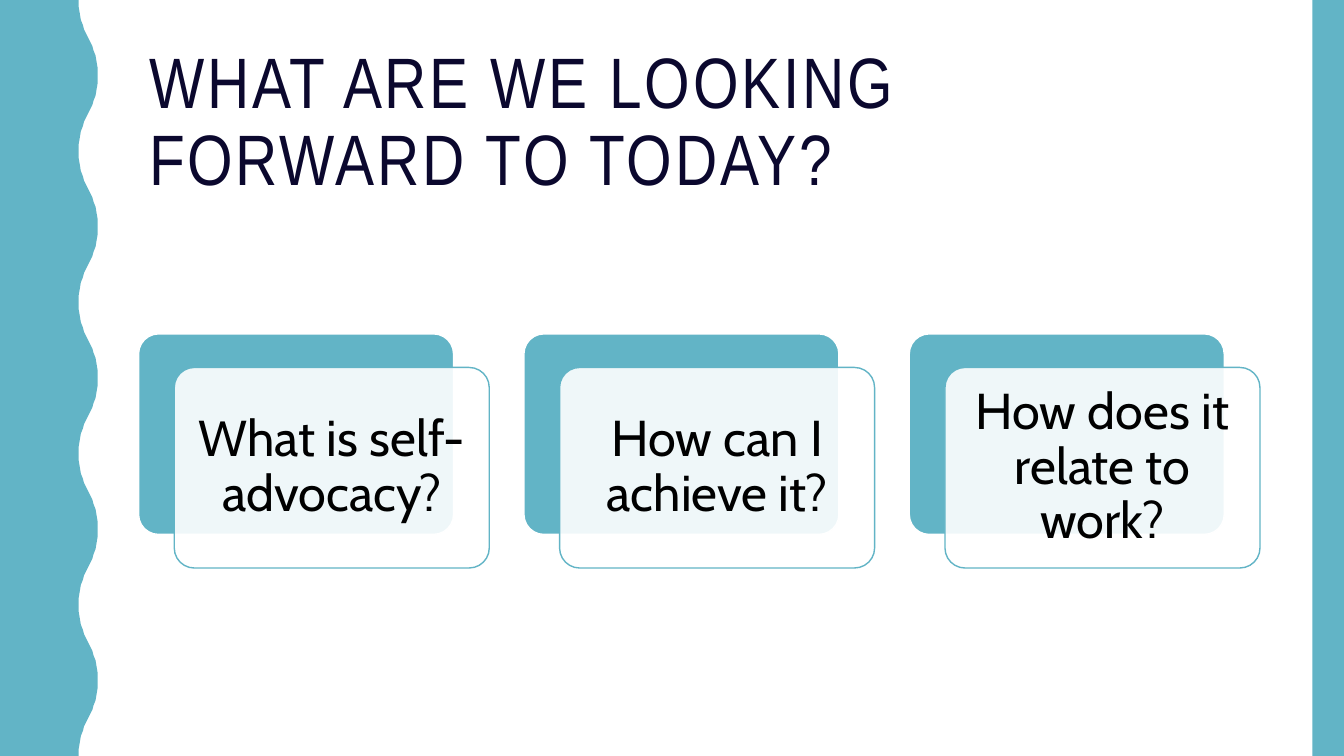
from typing import Any, NamedTuple

from lxml.etree import SubElement
from pptx import Presentation
from pptx.dml.color import RGBColor
from pptx.enum.shapes import MSO_SHAPE as Shape
from pptx.enum.text import MSO_ANCHOR as Anchor, MSO_AUTO_SIZE as AutoSize, PP_ALIGN as Align
from pptx.oxml.ns import qn
from pptx.util import Pt

PX = 9525
WIDTH, HEIGHT = 1280, 720
COLORS = {"teal": "62B4C6", "white": "FFFFFF", "navy": "0B082E", "black": "000000"}

# (x, y) along one outward half wave; the inward half mirrors it
HALF_WAVE = [(75, 0), (75, 7), (76, 13), (77, 19), (79, 24), (80, 28), (82, 32), (84, 36),
             (86, 40), (88, 44), (89, 48), (91, 53), (92, 59), (93, 65)]
HALF_HEIGHT, HALF_COUNT = 72, 10
WAVE_X_SUM = 75 + 93

CARD_PITCH = 367
BACK_TO_FRONT = (34, 32)
QUESTIONS = ["What is self-advocacy?", "How can I achieve it?", "How does it relate to work?"]


class Box(NamedTuple):
    left: int
    top: int
    width: int
    height: int

    def moved(self, dx: int, dy: int = 0) -> "Box":
        return self._replace(left=self.left + dx, top=self.top + dy)

    def emu(self) -> list[int]:
        return [n * PX for n in self]


class TextStyle(NamedTuple):
    font: str
    size: int
    color: str
    align: Align
    inset: tuple[int, int]


TITLE = TextStyle("Arial Narrow", 51, "navy", Align.LEFT, (10, 5))
QUESTION = TextStyle("Cabin", 36, "black", Align.CENTER, (14, 14))
TITLE_BOX = Box(132, 40, 1068, 156)
FIRST_CARD = Box(132, 318, 300, 191)
RIGHT_BAR = Box(1250, 0, 30, HEIGHT)


def rgb(name: str) -> RGBColor:
    return RGBColor.from_string(COLORS[name])


def set_all(target: Any, values: dict[str, Any]) -> None:
    for name, value in values.items():
        setattr(target, name, value)


def paint(sp: Any, fill: str, line: str | None = None) -> None:
    sp.shadow.inherit = False
    sp.fill.solid()
    sp.fill.fore_color.rgb = rgb(fill)
    if line:
        sp.line.color.rgb = rgb(line)
        sp.line.width = Pt(1)
    else:
        sp.line.fill.background()


def write(sp: Any, text: str, style: TextStyle) -> None:
    tf = sp.text_frame
    tf.text = text
    dx, dy = (n * PX for n in style.inset)
    set_all(tf, {"word_wrap": True, "auto_size": AutoSize.NONE, "vertical_anchor": Anchor.MIDDLE,
                 "margin_left": dx, "margin_right": dx, "margin_top": dy, "margin_bottom": dy})
    p = tf.paragraphs[0]
    set_all(p, {"alignment": style.align, "line_spacing": 0.9})
    for r in p.runs:
        set_all(r.font, {"name": style.font, "size": Pt(style.size)})
        r.font.color.rgb = rgb(style.color)


def add_title(s: Any, text: str) -> None:
    sp = s.shapes.title
    set_all(sp, dict(zip(("left", "top", "width", "height"), TITLE_BOX.emu())))
    write(sp, text, TITLE)
    for r in sp.text_frame.paragraphs[0].runs:
        r.font._element.set("spc", "200")


def add_wave(s: Any) -> None:
    edge = [(WAVE_X_SUM - x if half % 2 else x, y + half * HALF_HEIGHT)
            for half in range(HALF_COUNT) for x, y in HALF_WAVE]
    builder = s.shapes.build_freeform(0, 0, scale=PX)
    builder.add_line_segments([*edge, (HALF_WAVE[0][0], HEIGHT), (0, HEIGHT)], close=True)
    paint(builder.convert_to_shape(), "teal")


def add_round(s: Any, box: Box, fill: str, line: str) -> Any:
    sp = s.shapes.add_shape(Shape.ROUNDED_RECTANGLE, *box.emu())
    sp.adjustments[0] = 0.1
    paint(sp, fill, line)
    return sp


def add_card(s: Any, box: Box, question: str) -> None:
    """Draw a teal card with a translucent white one in front that holds the question."""
    add_round(s, box, "teal", "white")
    front = add_round(s, box.moved(*BACK_TO_FRONT), "white", "teal")
    fill_color = front._element.spPr.find(qn("a:solidFill"))[0]
    SubElement(fill_color, qn("a:alpha"), val="90000")
    write(front, question, QUESTION)


def main() -> None:
    prs = Presentation()
    set_all(prs, {"slide_width": WIDTH * PX, "slide_height": HEIGHT * PX})
    s = prs.slides.add_slide(prs.slide_layouts[5])
    add_title(s, "WHAT ARE WE LOOKING\vFORWARD TO TODAY?")
    add_wave(s)
    paint(s.shapes.add_shape(Shape.RECTANGLE, *RIGHT_BAR.emu()), "teal")
    for i, question in enumerate(QUESTIONS):
        add_card(s, FIRST_CARD.moved(i * CARD_PITCH), question)
    prs.save("out.pptx")


if __name__ == "__main__":
    main()
